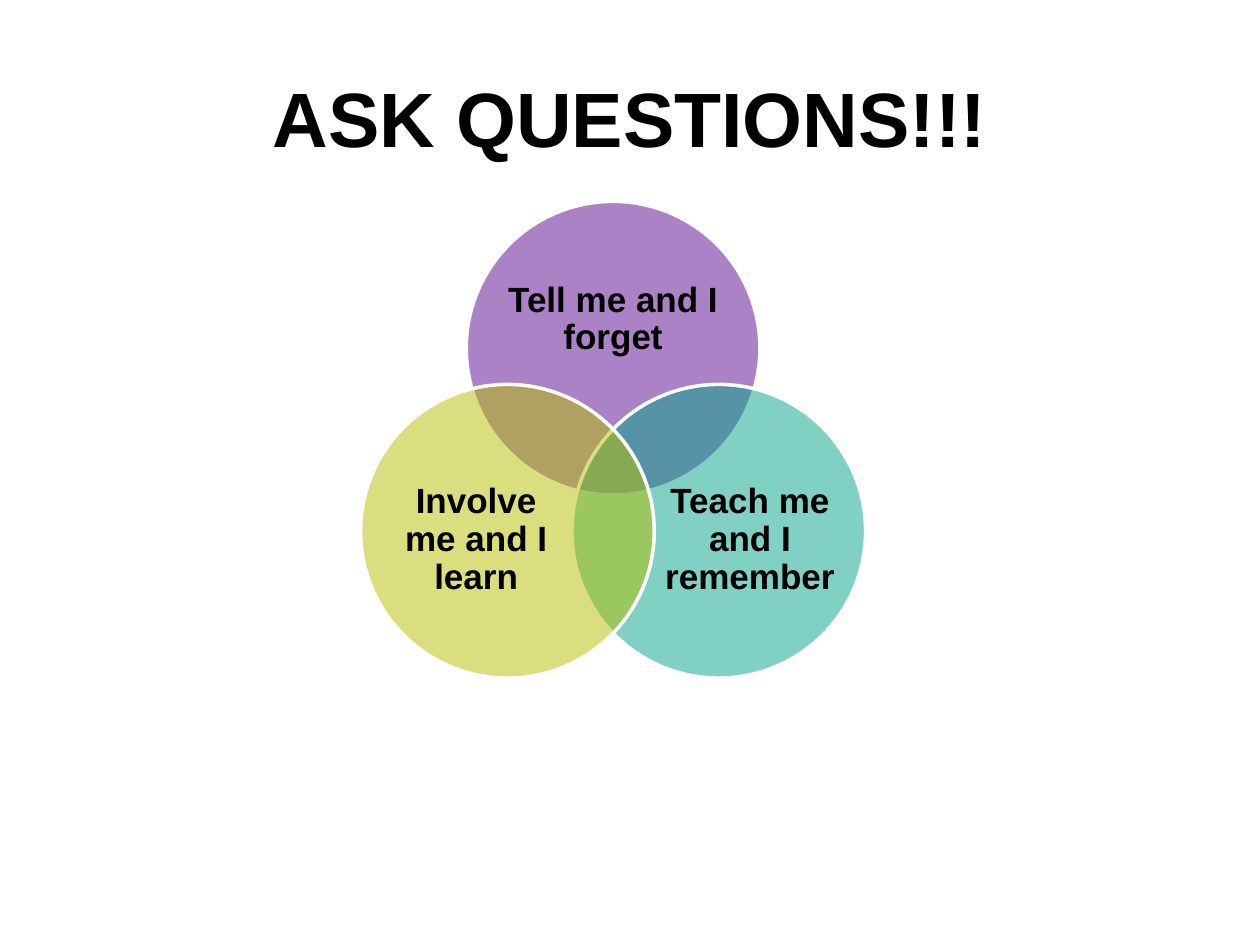
from math import cos, radians, sin

from lxml.etree import SubElement
from pptx import Presentation
from pptx.dml.color import RGBColor
from pptx.enum.shapes import MSO_SHAPE
from pptx.enum.text import MSO_ANCHOR, PP_ALIGN
from pptx.oxml.ns import qn
from pptx.util import Cm, Pt

BLACK = RGBColor(0x00, 0x00, 0x00)
WHITE = RGBColor(0xFF, 0xFF, 0xFF)
PURPLE = RGBColor(0x57, 0x06, 0x8C)
TEAL = RGBColor(0x03, 0xA5, 0x89)
LIME = RGBColor(0xB6, 0xBF, 0x00)

DIAMETER = 5.92
CENTER_X, CENTER_Y = 12.36, 9.48
SPREAD = 2.46

prs = Presentation()
prs.slide_width, prs.slide_height = Cm(25.4), Cm(19.05)
slide = prs.slides.add_slide(prs.slide_layouts[6])


def add_label(text, left, top, width, height, size):
    label = slide.shapes.add_textbox(Cm(left), Cm(top), Cm(width), Cm(height))
    frame = label.text_frame
    frame.word_wrap = True
    frame.vertical_anchor = MSO_ANCHOR.MIDDLE
    paragraph = frame.paragraphs[0]
    paragraph.text = text
    paragraph.alignment = PP_ALIGN.CENTER
    paragraph.font.name = "Arial"
    paragraph.font.size = Pt(size)
    paragraph.font.bold = True
    paragraph.font.color.rgb = BLACK
    return frame


add_label("ASK QUESTIONS!!!", 1.27, 0.76, 22.86, 3.18, 44)

messages = [
    ("Tell me and I forget", PURPLE, -90, (10.19, 5.11, 4.34, 2.67)),
    ("Teach me and I remember", TEAL, 30, (13.34, 9.27, 3.56, 3.25)),
    ("Involve me and I learn", LIME, 150, (7.82, 9.27, 3.56, 3.25)),
]
for message, color, angle, label_box in messages:
    left = CENTER_X + SPREAD * cos(radians(angle)) - DIAMETER / 2
    top = CENTER_Y + SPREAD * sin(radians(angle)) - DIAMETER / 2
    circle = slide.shapes.add_shape(
        MSO_SHAPE.OVAL, Cm(left), Cm(top), Cm(DIAMETER), Cm(DIAMETER)
    )
    circle.shadow.inherit = False
    circle.fill.solid()
    circle.fill.fore_color.rgb = color
    fill_color = circle.fill._xPr.find(qn("a:solidFill"))[0]
    SubElement(fill_color, qn("a:alpha"), val="50000")
    circle.line.color.rgb = WHITE
    circle.line.width = Pt(2)

    frame = add_label(message, *label_box, 20)
    frame.margin_left = frame.margin_right = 0
    frame.margin_top = frame.margin_bottom = 0
    frame.paragraphs[0].line_spacing = 0.9

prs.save("out.pptx")
